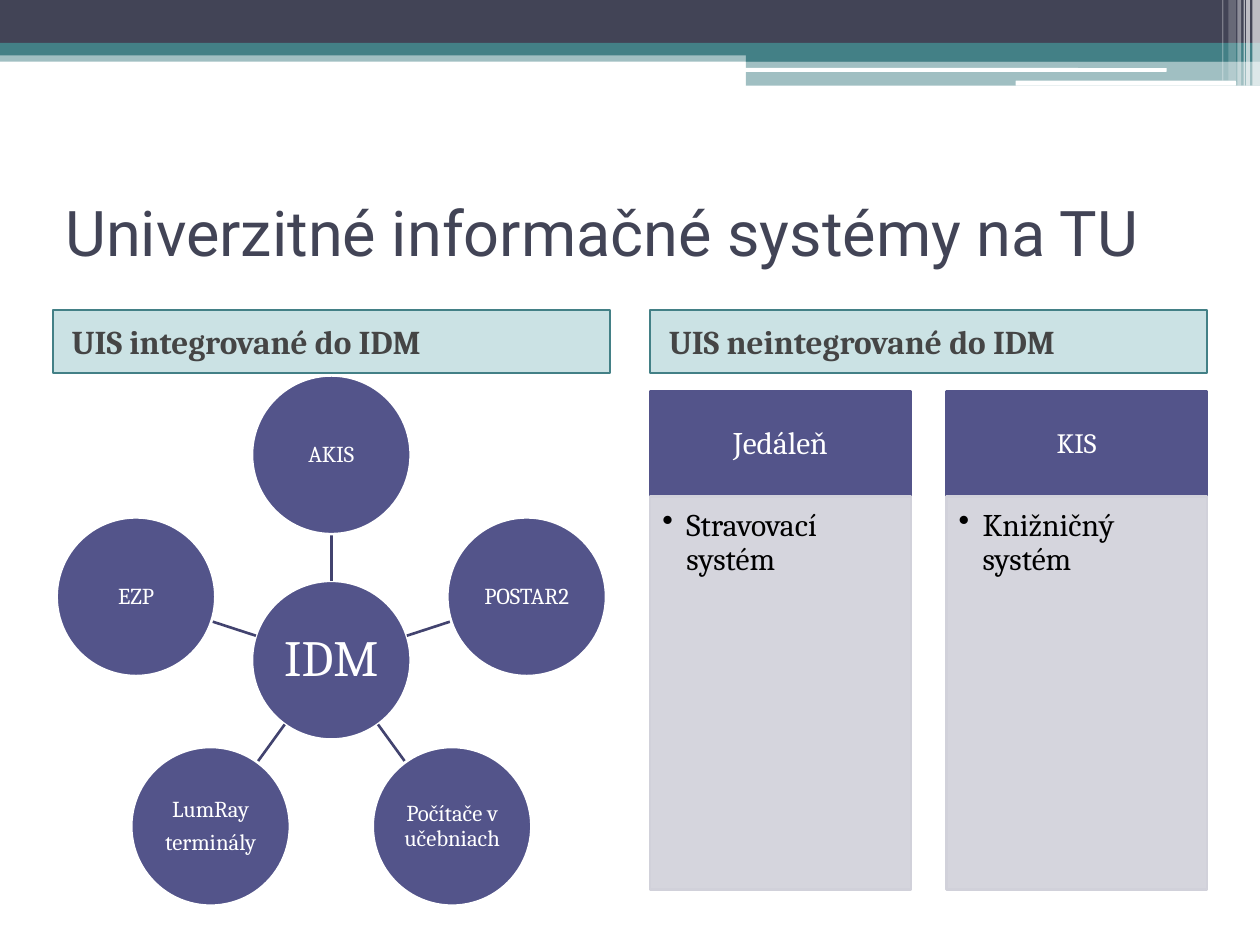
from math import cos, radians, sin

from lxml.etree import SubElement
from pptx import Presentation
from pptx.dml.color import RGBColor
from pptx.enum.shapes import MSO_CONNECTOR, MSO_SHAPE
from pptx.enum.text import MSO_ANCHOR, PP_ALIGN
from pptx.oxml.ns import qn
from pptx.util import Inches, Pt

# Content
TITLE = "Univerzitné informačné systémy na TU"
HEADINGS = [(0.42, "UIS integrované do IDM"), (5.16, "UIS neintegrované do IDM")]
HUB = "IDM"
SYSTEMS = ["AKIS", "POSTAR2", "Počítače v učebniach", "LumRay\nterminály", "EZP"]
COLUMNS = [("Jedáleň", 18, "Stravovací systém"), ("KIS", 16, "Knižničný systém")]

# Colours
DARK, TEAL, WHITE = "424456", "438086", "FFFFFF"
INDIGO, SPOKE, PALE = "53548A", "42436F", "D1D1DA"

# Banner: left, top, width, height, colour, opacity in percent
BANNER = [
    (0, 0.4, 10, 0.09, TEAL, 50),
    (0, 0, 10, 0.34, DARK, 100),
    (0, 0.34, 10, 0.1, TEAL, 100),
    (5.92, 0.39, 4.08, 0.1, TEAL, 100),
    (5.92, 0.48, 4.08, 0.2, TEAL, 50),
]
BANNER_RULES = [(5.91, 0.54, 3.35, 0.03), (8.06, 0.64, 1.75, 0.04)]
# Stripes: left, width, height, opacity in percent
STRIPES = [
    (9.94, 0.06, 0.68, 65), (9.89, 0.03, 0.68, 65), (9.87, 0.01, 0.68, 60),
    (9.82, 0.03, 0.68, 40), (9.75, 0.06, 0.64, 20), (9.7, 0.01, 0.64, 30),
]

presentation = Presentation()
presentation.slide_width, presentation.slide_height = Inches(10), Inches(7.5)
slide = presentation.slides.add_slide(presentation.slide_layouts[6])


def rgb(value):
    return RGBColor.from_string(value)


def paint(fill, colour, opacity=100):
    fill.solid()
    fill.fore_color.rgb = rgb(colour)
    if opacity < 100:
        for tint in fill._xPr.iter(qn("a:srgbClr")):
            SubElement(tint, qn("a:alpha"), val=str(opacity * 1000))


def add_box(left, top, width, height, colour, opacity=100, line=None,
            weight=1.5, kind=MSO_SHAPE.RECTANGLE):
    box = slide.shapes.add_shape(
        kind, Inches(left), Inches(top), Inches(width), Inches(height))
    box.shadow.inherit = False
    paint(box.fill, colour, opacity)
    if line:
        box.line.width = Pt(weight)
        paint(box.line.fill, line)
    else:
        box.line.fill.background()
    return box


def write(shape, text, size, colour=WHITE, font="Cambria", bold=False,
          align=PP_ALIGN.CENTER, anchor=MSO_ANCHOR.MIDDLE,
          margins=(0.1, 0.05, 0.1, 0.05), line_spacing=0.9, indent=0, bullet=False):
    frame = shape.text_frame
    frame.word_wrap = True
    frame.vertical_anchor = anchor
    (frame.margin_left, frame.margin_top,
     frame.margin_right, frame.margin_bottom) = map(Inches, margins)
    lines = text.split("\n")
    for number, words in enumerate(lines):
        paragraph = frame.add_paragraph() if number else frame.paragraphs[0]
        paragraph.alignment = align
        paragraph.line_spacing = line_spacing
        if number < len(lines) - 1:
            paragraph.space_after = Pt(0.35 * size)
        run = paragraph.add_run()
        run.text = words
        run.font.size, run.font.name, run.font.bold = Pt(size), font, bold
        run.font.color.rgb = rgb(colour)
        properties = paragraph._p.get_or_add_pPr()
        if indent:
            properties.set("marL", str(Inches(indent)))
        if bullet:
            properties.set("indent", str(-Inches(indent)))
            SubElement(properties, qn("a:buChar"), char="•")


# Banner
for part in BANNER:
    add_box(*part)
for rule in BANNER_RULES:
    add_box(*rule, WHITE, kind=MSO_SHAPE.ROUNDED_RECTANGLE)
for left, width, height, opacity in STRIPES:
    add_box(left, 0, width, height, WHITE, opacity)

# Title and headings
title = slide.shapes.add_textbox(Inches(0.42), Inches(1.25), Inches(9.17), Inches(1.17))
write(title, TITLE, 36, colour=DARK, font="Roboto", align=PP_ALIGN.LEFT, line_spacing=1)
for left, heading in HEADINGS:
    bar = add_box(left, 2.46, 4.42, 0.5, "328E97", 25, line=TEAL, weight=1)
    write(bar, heading, 19, colour="454545", bold=True, align=PP_ALIGN.LEFT,
          line_spacing=1, indent=0.05)

# Hub with systems around it
HUB_X, HUB_Y, ORBIT, DIAMETER = 2.63, 5.24, 1.63, 1.26


def add_circle(x, y, label, size):
    circle = add_box(x - DIAMETER / 2, y - DIAMETER / 2, DIAMETER, DIAMETER,
                     INDIGO, line=WHITE, kind=MSO_SHAPE.OVAL)
    write(circle, label, size, margins=(0.01,) * 4)


add_circle(HUB_X, HUB_Y, HUB, 29)
for number, system in enumerate(SYSTEMS):
    angle = radians(360 / len(SYSTEMS) * number - 90)
    inner, outer, centre = [
        (HUB_X + distance * cos(angle), HUB_Y + distance * sin(angle))
        for distance in (DIAMETER / 2, ORBIT - DIAMETER / 2, ORBIT)]
    spoke = slide.shapes.add_connector(
        MSO_CONNECTOR.STRAIGHT, *map(Inches, inner + outer))
    spoke.line.width = Pt(1.5)
    spoke.line.color.rgb = rgb(SPOKE)
    SubElement(spoke._element.spPr, qn("a:effectLst"))
    add_circle(*centre, system, 13)

# Columns of separate systems
for number, (name, size, description) in enumerate(COLUMNS):
    left = 5.16 + 2.35 * number
    header = add_box(left, 3.11, 2.07, 0.83, INDIGO, line=INDIGO)
    write(header, name, size)
    body = add_box(left, 3.94, 2.07, 3.12, PALE, 90, line=PALE)
    write(body, description, 18, colour="000000", align=PP_ALIGN.LEFT,
          anchor=MSO_ANCHOR.TOP, margins=(0.1, 0.1, 0.14, 0.16),
          indent=0.19, bullet=True)

presentation.save("out.pptx")
